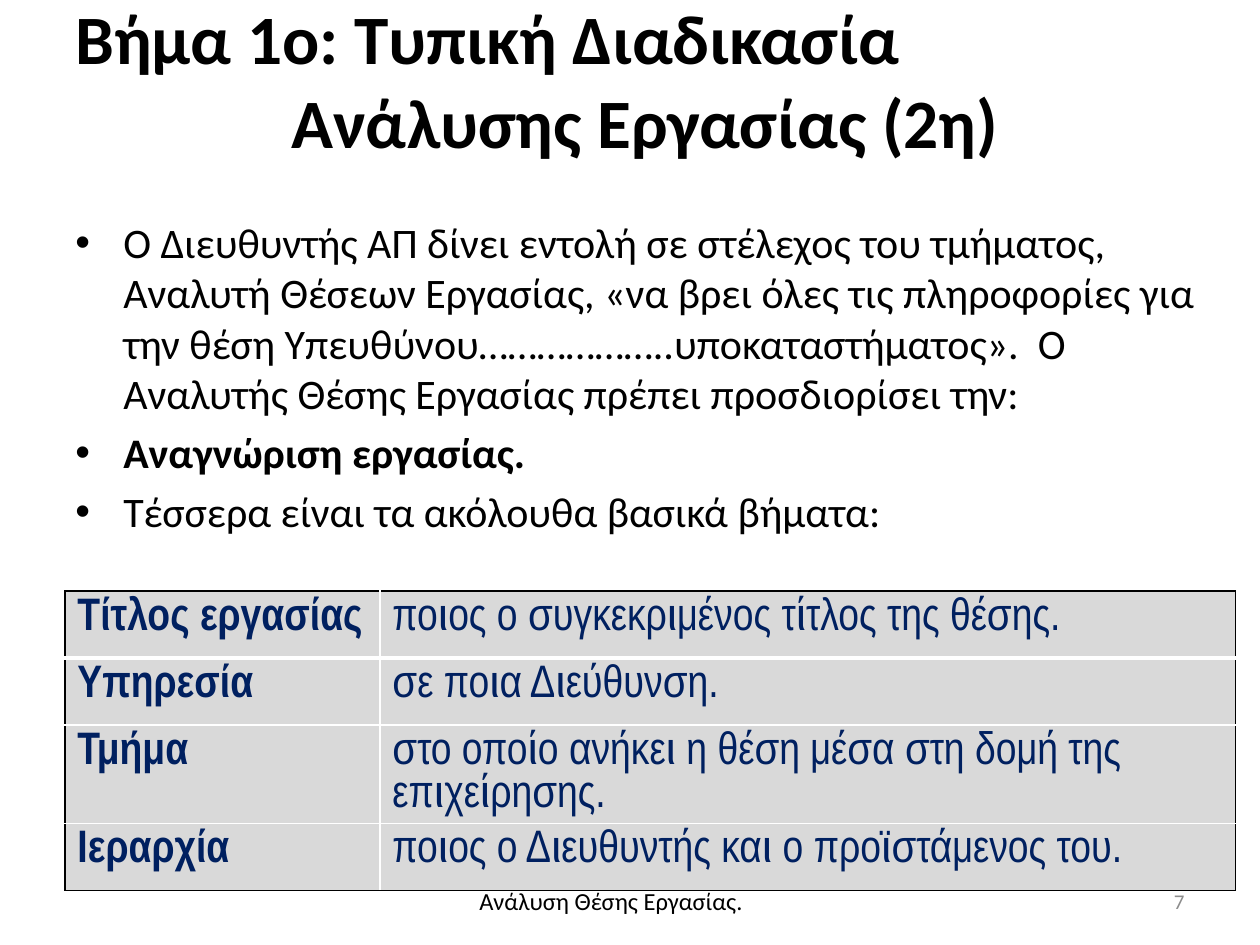
from lxml import etree
from pptx import Presentation
from pptx.dml.color import RGBColor
from pptx.enum.text import MSO_ANCHOR, PP_ALIGN
from pptx.oxml.ns import qn
from pptx.util import Inches, Pt

LEFT, CENTER, RIGHT = PP_ALIGN.LEFT, PP_ALIGN.CENTER, PP_ALIGN.RIGHT
TOP, MIDDLE = MSO_ANCHOR.TOP, MSO_ANCHOR.MIDDLE
GRID_COLUMNS, GRID_ROWS = 40, 30
BLACK, WHITE, NAVY, SILVER, GREY = "000000", "FFFFFF", "002060", "D9D9D9", "8C8C8C"

TITLE = [
    ("Βήμα 1ο: Τυπική Διαδικασία", {"align": LEFT}),
    ("Ανάλυσης Εργασίας (2η)", {"align": CENTER, "indent": 0.24}),
]
BULLETS = [
    ("Ο Διευθυντής ΑΠ δίνει εντολή σε στέλεχος του τμήματος, Αναλυτή Θέσεων Εργασίας, "
     "«να βρει όλες τις πληροφορίες για την θέση Υπευθύνου………………..υποκαταστήματος».  "
     "Ο Αναλυτής Θέσης Εργασίας πρέπει προσδιορίσει την:", {}),
    ("Αναγνώριση εργασίας.", {"bold": True, "before": 4.8}),
    ("Τέσσερα είναι τα ακόλουθα βασικά βήματα:", {"before": 4.8}),
]
JOB_IDENTITY = [
    ("Τίτλος εργασίας", "ποιος ο συγκεκριμένος τίτλος της θέσης."),
    ("Υπηρεσία", "σε ποια Διεύθυνση."),
    ("Τμήμα", "στο οποίο ανήκει η θέση μέσα στη δομή της επιχείρησης."),
    ("Ιεραρχία", "ποιος ο Διευθυντής και ο προϊστάμενος του."),
]


def color(value):
    return RGBColor.from_string(value)


def write(paragraph, text, size=24, font="Calibri", fill=BLACK, bold=False,
          align=LEFT, before=0, leading=None, indent=0, hanging=0, bullet=None):
    properties = paragraph._p.get_or_add_pPr()
    properties.set("marL", str(Inches(indent)))
    properties.set("indent", str(-Inches(hanging)))
    paragraph.alignment = align
    paragraph.space_before = Pt(before)
    if leading:
        paragraph.line_spacing = Pt(leading)
    if bullet:
        etree.SubElement(properties, qn("a:buFont"), typeface="Arial")
        etree.SubElement(properties, qn("a:buChar"), char=bullet)
    run = paragraph.add_run()
    run.text = text
    run.font.size = Pt(size)
    run.font.name = font
    run.font.bold = bold
    run.font.color.rgb = color(fill)


class SlideBuilder:
    def __init__(self, presentation):
        self.column = presentation.slide_width / GRID_COLUMNS
        self.row = presentation.slide_height / GRID_ROWS
        self.slide = presentation.slides.add_slide(presentation.slide_layouts[6])

    def place(self, left, top, width, height):
        return (round(left * self.column), round(top * self.row),
                round(width * self.column), round(height * self.row))

    def text(self, area, paragraphs, anchor=MIDDLE, **style):
        frame = self.slide.shapes.add_textbox(*self.place(*area)).text_frame
        frame.word_wrap = True
        frame.vertical_anchor = anchor
        for index, (words, extra) in enumerate(paragraphs):
            paragraph = frame.add_paragraph() if index else frame.paragraphs[0]
            write(paragraph, words, **{**style, **extra})

    def border(self, cell, edges):
        properties = cell._tc.get_or_add_tcPr()
        for index, (side, (shade, width)) in enumerate(edges.items()):
            line = etree.Element(qn(f"a:ln{side}"), w=str(Pt(width)))
            solid = etree.SubElement(line, qn("a:solidFill"))
            etree.SubElement(solid, qn("a:srgbClr"), val=shade)
            properties.insert(index, line)

    def table(self, left, top, records, column_widths, row_heights):
        area = self.place(left, top, sum(column_widths), sum(row_heights))
        table = self.slide.shapes.add_table(
            len(records), len(column_widths), *area).table
        table.first_row = table.horz_banding = False
        for column, width in zip(table.columns, column_widths):
            column.width = round(width * self.column)
        for row, height in zip(table.rows, row_heights):
            row.height = round(height * self.row)
        last_row, last_column = len(records) - 1, len(column_widths) - 1
        for r, record in enumerate(records):
            for c, words in enumerate(record):
                cell = table.cell(r, c)
                cell.fill.solid()
                cell.fill.fore_color.rgb = color(SILVER)
                write(cell.text_frame.paragraphs[0], words, size=26, leading=24.5,
                      font="Arial Narrow", fill=NAVY, bold=c == 0)
                self.border(cell, {
                    "L": (BLACK if c == 0 else WHITE, 1),
                    "R": (BLACK if c == last_column else WHITE, 1),
                    "T": (BLACK, 1) if r == 0 else (WHITE, 3 if r == 1 else 1),
                    "B": (BLACK if r == last_row else WHITE, 3 if r == 0 else 1),
                })


def main():
    presentation = Presentation()
    presentation.slide_width, presentation.slide_height = Inches(10), Inches(7.5)
    builder = SlideBuilder(presentation)
    builder.text((2, 0, 36, 5), TITLE, size=39.6, bold=True)
    builder.text((2, 6.68, 37, 8), BULLETS, anchor=TOP,
                 indent=0.38, hanging=0.38, bullet="•")
    builder.table(2.06, 18.76, JOB_IDENTITY, (10, 27.16), (2.13, 2.13, 3.12, 2.13))
    builder.text((11.4, 27.8, 16, 1.6), [("Ανάλυση Θέσης Εργασίας.", {})],
                 size=14, align=CENTER)
    builder.text((28.68, 27.8, 9.32, 1.6), [("7", {})],
                 size=12, fill=GREY, align=RIGHT)
    presentation.save("out.pptx")


if __name__ == "__main__":
    main()
